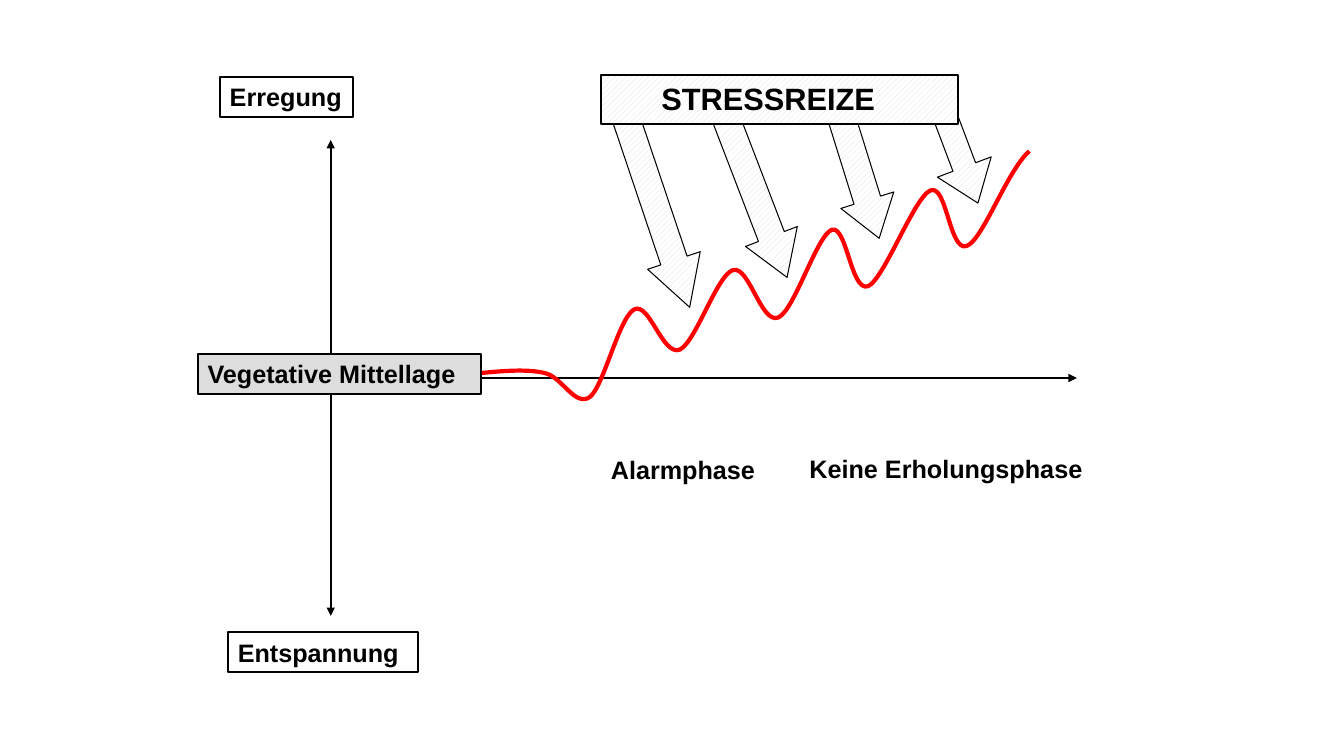
import lxml.etree
import pptx
import pptx.dml.color
import pptx.enum.dml
import pptx.enum.shapes
import pptx.enum.text
import pptx.oxml.ns
import pptx.util

PX = 9144
SHAPES = pptx.enum.shapes.MSO_SHAPE
HATCH = "hatch"
BLACK, RED, GREY, WHITE = "000000", "FF0000", "DDDDDD", "FFFFFF"

STRESS_CURVE = [
    (478, 370),
    (500, 368), (522, 366), (540, 370), (558, 374), (570, 404), (585, 394),
    (599, 383), (614, 315), (629, 307), (644, 299), (657, 353), (674, 347),
    (690, 340), (711, 273), (727, 268), (743, 263), (755, 322), (772, 315),
    (788, 308), (810, 234), (825, 228), (840, 223), (844, 290), (861, 284),
    (877, 277), (907, 195), (923, 189), (939, 182), (942, 251), (959, 244),
    (975, 238), (999, 169), (1021, 150),
]
AXES = [
    ((328, 391), (328, 611), True),
    ((470, 375), (1005, 375), False),
    ((328, 352), (328, 139), True),
    ((1005, 375), (1068, 375), True),
]
STRESS_ARROWS = [
    ((625, 112, 55, 198), 341.4, (0.5, 0.89)),
    ((722, 107, 55, 174), 339, (0.5, 0.79)),
    ((821, 82, 55, 158), 342.7, (0.5, 0.72)),
    ((922, 95, 57, 110), 339.3, (0.42, 0.67)),
]


def px(*lengths):
    """Turn px lengths into EMU."""
    return [pptx.util.Emu(length * PX) for length in lengths]


def rgb(code):
    """Turn a hex string into a colour."""
    return pptx.dml.color.RGBColor.from_string(code)


def set_all(target, values):
    """Set each named attribute on the target."""
    for name, value in values.items():
        setattr(target, name, value)


def set_outline(line, colour, width):
    """Give a line its colour and its width in points."""
    line.fill.solid()
    line.fill.fore_color.rgb = rgb(colour)
    line.width = pptx.util.Pt(width)


def set_fill(fill, paint):
    """Apply no fill, the hatch pattern or a plain colour."""
    if paint is None:
        fill.background()
    elif paint == HATCH:
        fill.patterned()
        fill.pattern = pptx.enum.dml.MSO_PATTERN.WIDE_UPWARD_DIAGONAL
        fill.fore_color.rgb = rgb(GREY)
        fill.back_color.rgb = rgb(WHITE)
    else:
        fill.solid()
        fill.fore_color.rgb = rgb(paint)


def write_text(frame, text, size=18, wrap=True, inset=10):
    """Write one bold, left-aligned line into a text frame."""
    set_all(frame, {
        "word_wrap": wrap,
        "auto_size": pptx.enum.text.MSO_AUTO_SIZE.SHAPE_TO_FIT_TEXT,
        "vertical_anchor": pptx.enum.text.MSO_ANCHOR.TOP,
        "margin_left": px(inset)[0],
    })
    paragraph = frame.paragraphs[0]
    paragraph.alignment = pptx.enum.text.PP_ALIGN.LEFT
    run = paragraph.add_run()
    run.text = text
    set_all(run.font, {"name": "Arial", "size": pptx.util.Pt(size), "bold": True})
    run.font.color.rgb = rgb(BLACK)


def add_outlined(slide, preset, place, paint, width):
    """Add a black-outlined preset shape."""
    shape = slide.shapes.add_shape(preset, *px(*place))
    shape.shadow.inherit = False
    set_fill(shape.fill, paint)
    set_outline(shape.line, BLACK, width)
    return shape


def add_box(slide, text, place, paint=None, **style):
    """Add a framed label."""
    box = add_outlined(slide, SHAPES.RECTANGLE, place, paint, 1.5)
    write_text(box.text_frame, text, **style)


def add_phase(slide, text, place):
    """Add an unframed phase label."""
    phase = slide.shapes.add_textbox(*px(*place))
    write_text(phase.text_frame, text, wrap=False)


def add_axis(slide, start, end, pointed):
    """Add a straight axis part, with an arrowhead if pointed."""
    axis = slide.shapes.add_connector(
        pptx.enum.shapes.MSO_CONNECTOR.STRAIGHT, *px(*start, *end))
    set_outline(axis.line, BLACK, 1.5)
    qn = pptx.oxml.ns.qn
    if pointed:
        outline = axis.line._get_or_add_ln()
        lxml.etree.SubElement(outline, qn("a:tailEnd"), type="triangle")
    lxml.etree.SubElement(axis._element.spPr, qn("a:effectLst"))


def add_stress_arrow(slide, place, rotation, proportions):
    """Add a tilted hatched block arrow."""
    arrow = add_outlined(slide, SHAPES.DOWN_ARROW, place, HATCH, 0.75)
    arrow.rotation = rotation
    for index, proportion in enumerate(proportions):
        arrow.adjustments[index] = proportion


def add_curve(slide, points):
    """Add a red Bézier curve from a start and triples of points."""
    builder = slide.shapes.build_freeform(*points[0], scale=PX)
    builder.add_line_segments(points[1:], close=False)
    curve = builder.convert_to_shape()
    curve.shadow.inherit = False
    set_fill(curve.fill, None)
    set_outline(curve.line, RED, 3)
    qn = pptx.oxml.ns.qn
    segments = list(curve._element.iter(qn("a:lnTo")))
    outline = segments[0].getparent()
    for first in range(0, len(segments), 3):
        bezier = lxml.etree.SubElement(outline, qn("a:cubicBezTo"))
        for segment in segments[first:first + 3]:
            bezier.append(segment[0])
            outline.remove(segment)


def main():
    """Build the stress diagram and save it."""
    deck = pptx.Presentation()
    set_all(deck, dict(zip(("slide_width", "slide_height"), px(1333, 750))))
    slide = deck.slides.add_slide(deck.slide_layouts[6])
    for axis in AXES:
        add_axis(slide, *axis)
    add_box(slide, "Erregung", (218, 76, 132, 40), wrap=False)
    add_box(slide, "Entspannung", (226, 627, 189, 40))
    add_box(slide, "Vegetative Mittellage", (196, 351, 281, 40), GREY)
    add_curve(slide, STRESS_CURVE)
    for arrow in STRESS_ARROWS:
        add_stress_arrow(slide, *arrow)
    add_box(slide, "STRESSREIZE", (596, 74, 354, 49), HATCH, size=22, inset=60)
    add_phase(slide, "Alarmphase", (596, 446, 165, 40))
    add_phase(slide, "Keine Erholungsphase", (793, 445, 294, 40))
    deck.save("out.pptx")


if __name__ == "__main__":
    main()
